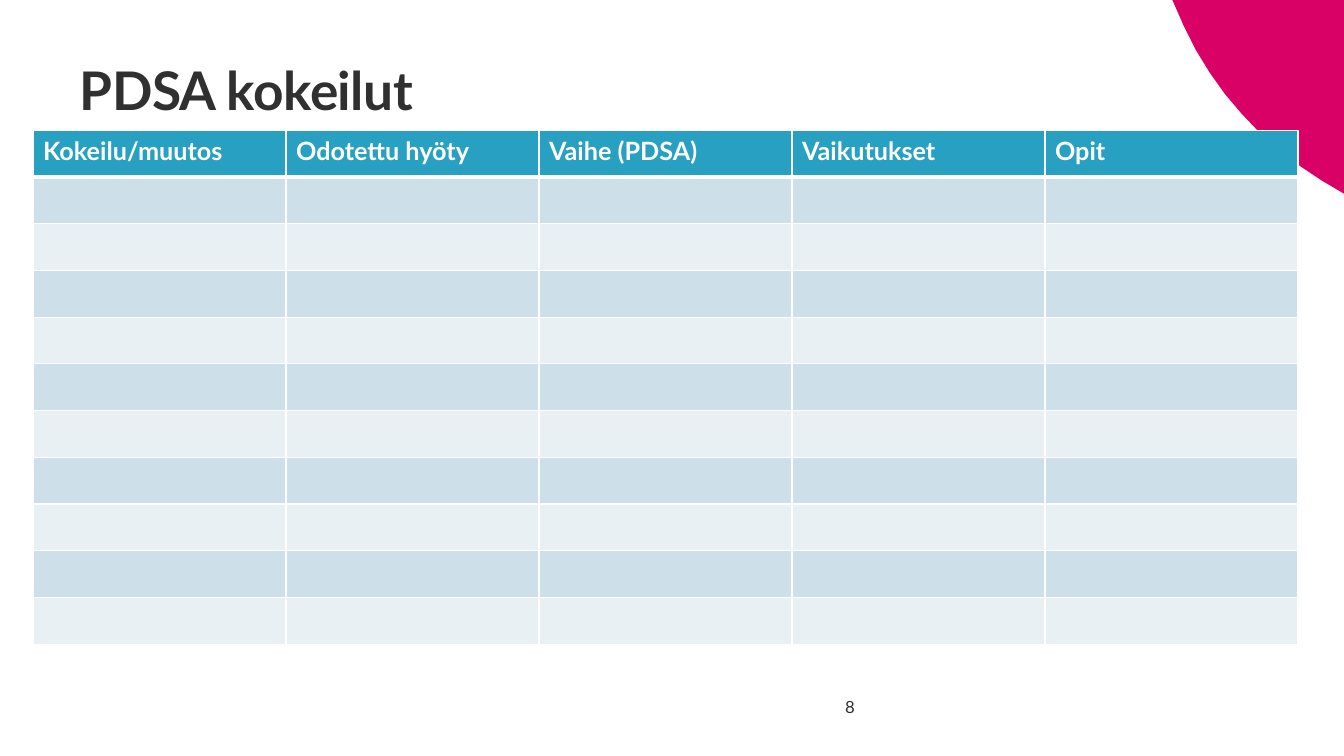
"""Build the PDSA trials slide with its empty tracking table."""
import pptx
import pptx.dml.color
import pptx.enum.text
import pptx.oxml
import pptx.oxml.ns
import pptx.util

Pt = pptx.util.Pt
MSO_ANCHOR = pptx.enum.text.MSO_ANCHOR
PP_ALIGN = pptx.enum.text.PP_ALIGN

TITLE = "PDSA kokeilut"
HEADERS = ["Kokeilu/muutos", "Odotettu hyöty", "Vaihe (PDSA)", "Vaikutukset", "Opit"]
EMPTY_ROWS = 10
PAGE_NUMBER = "8"
FONT = "Lato"
COLORS = {
    "white": "FFFFFF",
    "text": "303030",
    "corner": "D90066",
    "header": "28A0C1",
    "odd": "CDDFE9",
    "even": "E8F0F4",
}
WIDTH, HEIGHT = 960, 540
TABLE_LEFT, TABLE_TOP = 23.6, 93.1
COL_WIDTH, ROW_HEIGHT = 180.72, 33.38
CORNER_CURVE = [
    (837.4, 0), (845.3, 18), (853.9, 35.3), (864, 51.8), (874.8, 67),
    (887, 81.4), (900, 95), (913.7, 107.3), (928.8, 118.8),
    (943.9, 128.9), (WIDTH, 138.4),
]


def rgb(name):
    return pptx.dml.color.RGBColor.from_string(COLORS[name])


def style(p, size, color, bold=False):
    p.font.name = FONT
    p.font.size = Pt(size)
    p.font.bold = bold
    p.font.color.rgb = rgb(color)


def add_borders(cell, bottom, top):
    tc_pr = cell._tc.get_or_add_tcPr()
    for side, width in (("L", 1), ("R", 1), ("T", top), ("B", bottom)):
        tc_pr.append(pptx.oxml.parse_xml(
            f'<a:ln{side} {pptx.oxml.ns.nsdecls("a")} w="{Pt(width)}"><a:solidFill>'
            f'<a:srgbClr val="{COLORS["white"]}"/></a:solidFill></a:ln{side}>'))


def add_corner(slide):
    points = [(Pt(x), Pt(y)) for x, y in CORNER_CURVE + [(WIDTH, 0)]]
    builder = slide.shapes.build_freeform(*points[0])
    builder.add_line_segments(points[1:], close=True)
    sp = builder.convert_to_shape()
    sp.shadow.inherit = False
    sp.fill.solid()
    sp.fill.fore_color.rgb = rgb("corner")
    sp.line.fill.background()


def add_title(slide):
    sp = slide.shapes.title
    sp.left, sp.top, sp.width, sp.height = Pt(56.9), Pt(28.1), Pt(775.4), Pt(79.2)
    tf = sp.text_frame
    tf.text = TITLE
    tf.auto_size = pptx.enum.text.MSO_AUTO_SIZE.NONE
    tf.vertical_anchor = MSO_ANCHOR.MIDDLE
    tf.margin_left = 0
    p = tf.paragraphs[0]
    p.alignment = PP_ALIGN.LEFT
    p.line_spacing = 0.8
    style(p, 38, "text", True)
    p.runs[0].font._element.set("spc", "-40")


def add_trials(slide):
    rows, cols = EMPTY_ROWS + 1, len(HEADERS)
    table = slide.shapes.add_table(
        rows, cols, Pt(TABLE_LEFT), Pt(TABLE_TOP),
        Pt(COL_WIDTH * cols), Pt(ROW_HEIGHT * rows)).table
    for column in table.columns:
        column.width = Pt(COL_WIDTH)
    for i, row in enumerate(table.rows):
        row.height = Pt(ROW_HEIGHT)
        fill = "header" if i == 0 else "odd" if i % 2 else "even"
        for j, cell in enumerate(row.cells):
            add_borders(cell, 3 if i == 0 else 1, 3 if i == 1 else 1)
            cell.fill.solid()
            cell.fill.fore_color.rgb = rgb(fill)
            if i == 0:
                cell.text = HEADERS[j]
                style(cell.text_frame.paragraphs[0], 18, "white", True)


def add_page_number(slide):
    tf = slide.shapes.add_textbox(Pt(577.4), Pt(491), Pt(40.3), Pt(28.1)).text_frame
    tf.word_wrap = True
    tf.vertical_anchor = MSO_ANCHOR.MIDDLE
    tf.text = PAGE_NUMBER
    p = tf.paragraphs[0]
    p.alignment = PP_ALIGN.RIGHT
    style(p, 12, "text")


def main():
    prs = pptx.Presentation()
    prs.slide_width, prs.slide_height = Pt(WIDTH), Pt(HEIGHT)
    slide = prs.slides.add_slide(prs.slide_layouts[5])
    add_corner(slide)
    add_title(slide)
    add_trials(slide)
    add_page_number(slide)
    prs.save("out.pptx")


if __name__ == "__main__":
    main()
